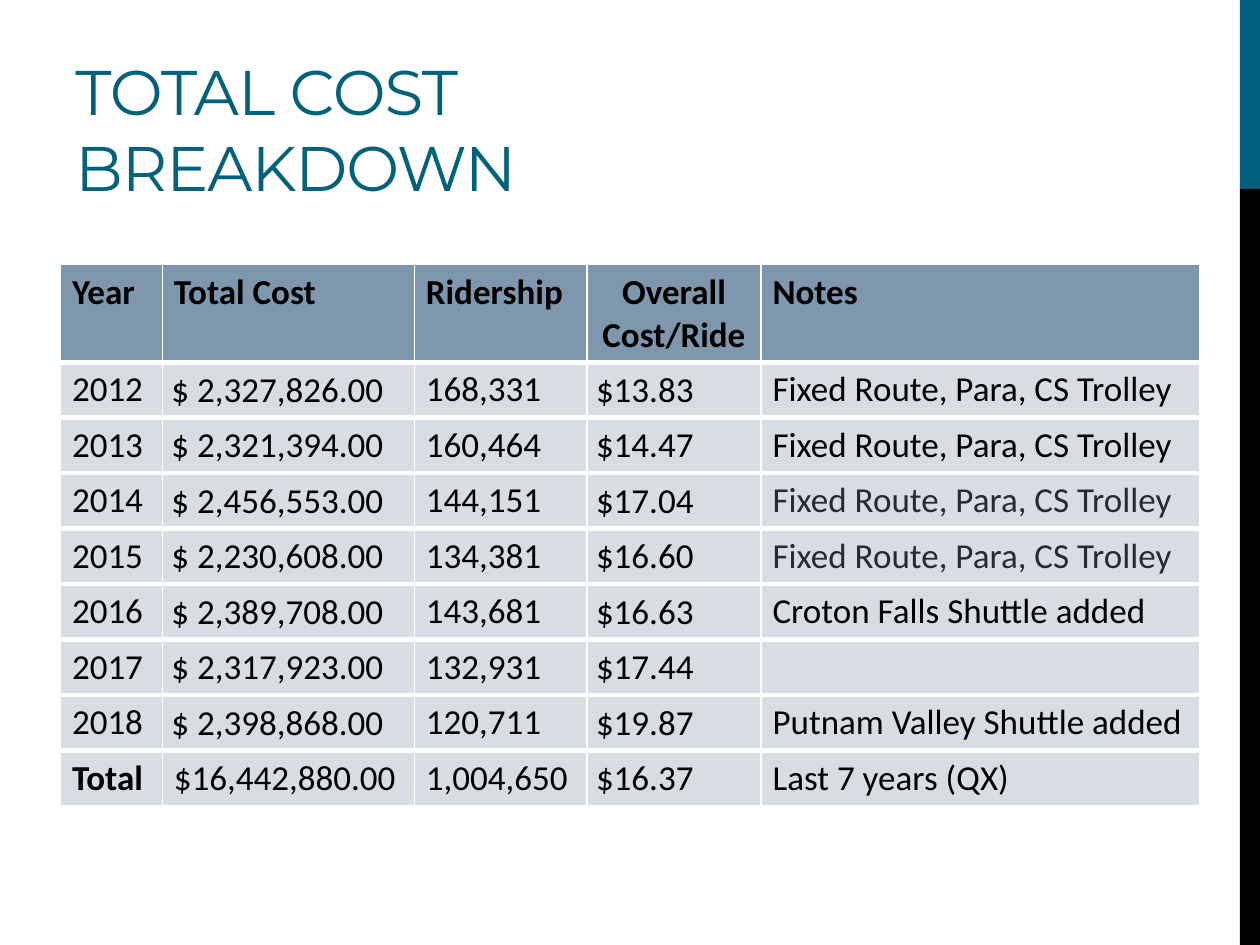
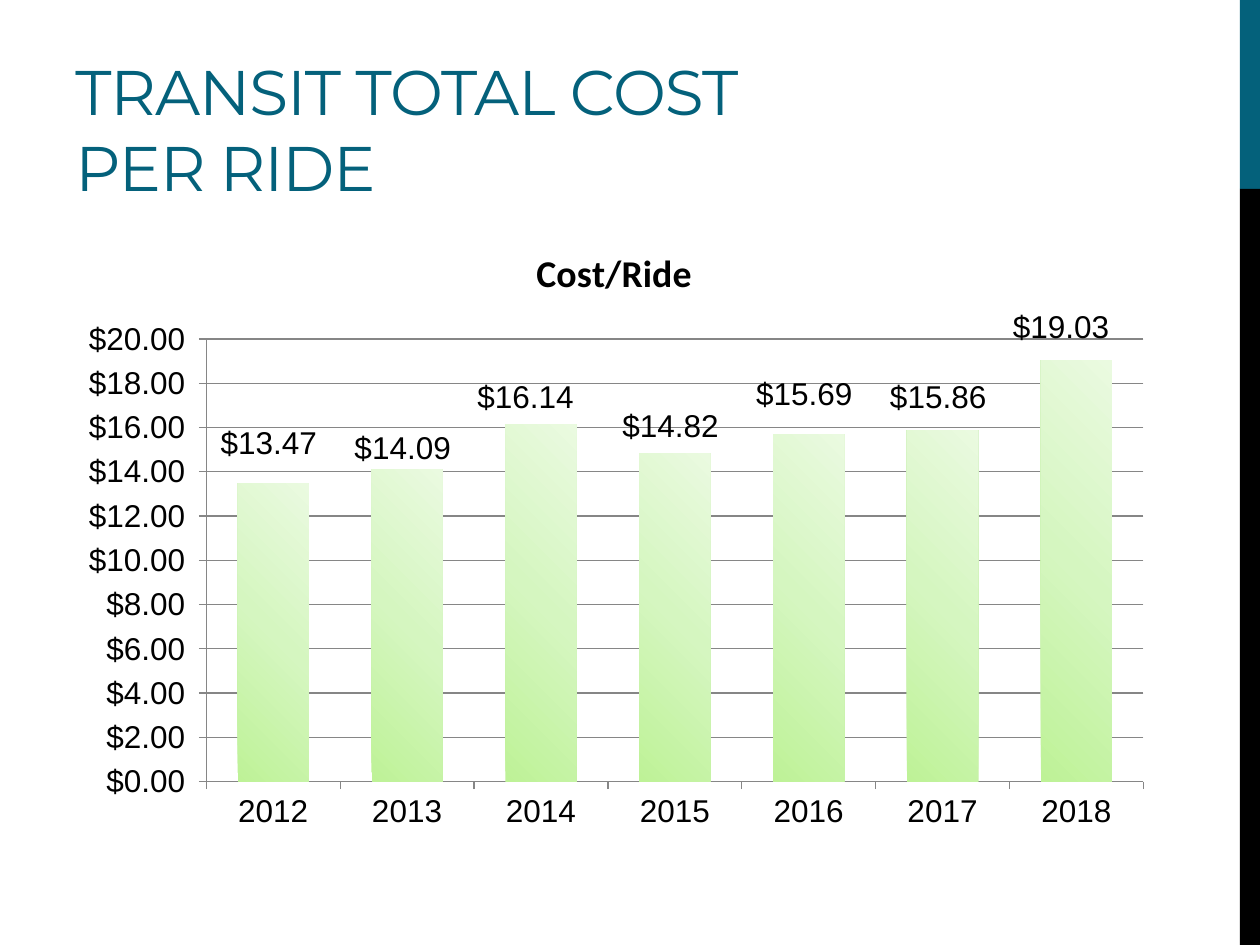
"""Build two transit cost slides: a yearly cost table and a cost per ride chart."""
import copy

import pptx
import pptx.chart.data
import pptx.dml.color
import pptx.enum.chart
import pptx.enum.shapes
import pptx.enum.text
import pptx.oxml
import pptx.oxml.ns
import pptx.util

Pt = pptx.util.Pt
RGBColor = pptx.dml.color.RGBColor
qn = pptx.oxml.ns.qn
MIDDLE = pptx.enum.text.MSO_ANCHOR.MIDDLE

TEAL = RGBColor(0x04, 0x61, 0x7B)
BLACK = RGBColor(0x00, 0x00, 0x00)
INK = RGBColor(0x29, 0x29, 0x34)
HEADER_BLUE = RGBColor(0x7E, 0x97, 0xAD)
ROW_GREY = RGBColor(0xD8, 0xDD, 0xE3)
AXIS_GREY = RGBColor(0x86, 0x86, 0x86)
GREENS = [RGBColor(0xBE, 0xF2, 0x97), RGBColor(0xD5, 0xF6, 0xC0), RGBColor(0xEA, 0xFA, 0xE0)]
DOLLARS = '"$"#,##0.00_);[Red]\\("$"#,##0.00\\)'


def add_run(paragraph, text, font_name, size, color, bold=False):
    run = paragraph.add_run()
    run.text = text
    run.font.name = font_name
    run.font.size = Pt(size)
    run.font.color.rgb = color
    run.font.bold = bold
    return run


def make_layout(prefix="", **places):
    values = "".join(f'<c:{key} val="{value}"/>' for key, value in places.items())
    return pptx.oxml.parse_xml(
        '<c:layout xmlns:c="http://schemas.openxmlformats.org/drawingml/2006/chart">'
        f"<c:manualLayout>{prefix}{values}</c:manualLayout></c:layout>")


presentation = pptx.Presentation()
presentation.slide_width = Pt(720)
presentation.slide_height = Pt(540)

slides = []
for title in ("TOTAL COST BREAKDOWN", "TRANSIT TOTAL COST PER RIDE"):
    slide = presentation.slides.add_slide(presentation.slide_layouts[6])
    for top, height, color in ((0, 108, TEAL), (108, 432, BLACK)):
        band = slide.shapes.add_shape(
            pptx.enum.shapes.MSO_SHAPE.RECTANGLE, Pt(708.5), Pt(top), Pt(11.5), Pt(height))
        band.shadow.inherit = False
        band.fill.solid()
        band.fill.fore_color.rgb = color
        band.line.fill.background()
    title_box = slide.shapes.add_textbox(Pt(36), Pt(12), Pt(456), Pt(108))
    title_box.text_frame.word_wrap = True
    title_box.text_frame.vertical_anchor = pptx.enum.text.MSO_ANCHOR.BOTTOM
    title_run = add_run(title_box.text_frame.paragraphs[0], title, "Montserrat", 36, TEAL)
    title_run.font._element.set("spc", "-60")
    slides.append(slide)
table_slide, chart_slide = slides

SERVICES = "Fixed Route, Para, CS Trolley"
cost_rows = [
    ("Year", "Total Cost", "Ridership", "Overall Cost/Ride", "Notes"),
    ("2012", "$ 2,327,826.00", "168,331", "$13.83", SERVICES),
    ("2013", "$ 2,321,394.00", "160,464", "$14.47", SERVICES),
    ("2014", "$ 2,456,553.00", "144,151", "$17.04", SERVICES),
    ("2015", "$ 2,230,608.00", "134,381", "$16.60", SERVICES),
    ("2016", "$ 2,389,708.00", "143,681", "$16.63", "Croton Falls Shuttle added"),
    ("2017", "$ 2,317,923.00", "132,931", "$17.44", ""),
    ("2018", "$ 2,398,868.00", "120,711", "$19.87", "Putnam Valley Shuttle added"),
    ("Total", "$16,442,880.00", "1,004,650", "$16.37", "Last 7 years (QX)"),
]
last_row = len(cost_rows) - 1
table = table_slide.shapes.add_table(
    len(cost_rows), 5, Pt(34.6), Pt(151.2), Pt(650.9), Pt(309.4)).table
table.horz_banding = False
for column, width in zip(table.columns, (58.2, 144, 98.6, 99.5, 250.6)):
    column.width = Pt(width)
for row_index, values in enumerate(cost_rows):
    is_header = row_index == 0
    table.rows[row_index].height = Pt(55.8 if is_header else 31.7)
    for column_index, text in enumerate(values):
        cell = table.cell(row_index, column_index)
        borders = {"L": 1, "R": 1, "T": 1 if is_header else 3, "B": 1 if row_index == last_row else 3}
        for side, width in borders.items():
            cell._tc.get_or_add_tcPr().append(pptx.oxml.parse_xml(
                f'<a:ln{side} xmlns:a="http://schemas.openxmlformats.org/drawingml/2006/main" '
                f'w="{Pt(width)}"><a:solidFill><a:srgbClr val="FFFFFF"/></a:solidFill></a:ln{side}>'))
        cell.fill.solid()
        cell.fill.fore_color.rgb = HEADER_BLUE if is_header else ROW_GREY
        cell.margin_left = cell.margin_right = Pt(6.6)
        paragraph = cell.text_frame.paragraphs[0]
        if not is_header or column_index == 3:
            cell.vertical_anchor = MIDDLE
        if is_header and column_index == 3:
            paragraph.alignment = pptx.enum.text.PP_ALIGN.CENTER
        is_tight = column_index == 3 or (column_index == 1 and row_index != last_row)
        if is_tight and not is_header:
            cell.margin_left = Pt(5.2)
            cell.margin_right = cell.margin_top = Pt(0.7)
            cell.margin_bottom = Pt(0)
        if text:
            color = INK if column_index == 4 and row_index in (3, 4) else BLACK
            add_run(paragraph, text, "Calibri", 20, color, is_header or text == "Total")

chart_data = pptx.chart.data.CategoryChartData(number_format=DOLLARS)
chart_data.categories = [str(year) for year in range(2012, 2019)]
chart_data.add_series("Cost/Ride", (13.47, 14.09, 16.14, 14.82, 15.69, 15.86, 19.03))
chart = chart_slide.shapes.add_chart(
    pptx.enum.chart.XL_CHART_TYPE.COLUMN_STACKED,
    Pt(36), Pt(126), Pt(630), Pt(356.4), chart_data).chart
chart.font.name = "Arial"
chart.font.size = Pt(18)
chart.font.color.rgb = BLACK
chart.has_legend = False
chart.has_title = True
add_run(chart.chart_title.text_frame.paragraphs[0], "Cost/Ride", "Calibri", 21.6, BLACK, True)
EDGE = '<c:xMode val="edge"/><c:yMode val="edge"/>'
chart.chart_title._element.find(qn("c:tx")).addnext(make_layout(EDGE, x=0.43, y=0.06))

for axis in (chart.category_axis, chart.value_axis):
    axis.major_tick_mark = pptx.enum.chart.XL_TICK_MARK.OUTSIDE
    axis.minor_tick_mark = pptx.enum.chart.XL_TICK_MARK.NONE
    axis.format.line.color.rgb = AXIS_GREY
    axis.format.line.width = Pt(0.75)
value_axis = chart.value_axis
value_axis.minimum_scale = 0
value_axis.maximum_scale = 20
value_axis.major_unit = 2
value_axis.tick_labels.number_format = DOLLARS
value_axis.tick_labels.number_format_is_linked = False
value_axis.has_major_gridlines = True
value_axis.major_gridlines.format.line.color.rgb = AXIS_GREY
value_axis.major_gridlines.format.line.width = Pt(0.75)

plot = chart.plots[0]
plot.gap_width = 88
plot.overlap = 100
plot.vary_by_categories = False
plot_area = plot._element.getparent()
for old_layout in plot_area.findall(qn("c:layout")):
    plot_area.remove(old_layout)
plot_area.insert(0, make_layout(
    '<c:layoutTarget val="inner"/>' + EDGE, x=0.13, y=0.19, w=0.85, h=0.71))

series = plot.series[0]
fill = series.format.fill
fill.gradient()
fill.gradient_angle = 45
first_stop = series._element.find(".//" + qn("a:gs"))
first_stop.addnext(copy.deepcopy(first_stop))
for stop, position, color in zip(fill.gradient_stops, (0, 0.5, 1), GREENS):
    stop.position = position
    stop.color.rgb = color

labels = series.data_labels
labels.show_value = True
labels.number_format = DOLLARS
labels.number_format_is_linked = False
labels.position = pptx.enum.chart.XL_LABEL_POSITION.INSIDE_END
label_shifts = [(0, -0.1), (0, -0.07), (-0.01, -0.08), (0, -0.08),
                (0, -0.1), (0, -0.09), (-0.01, -0.09)]
for index in range(len(label_shifts)):
    series.points[index].data_label.position = pptx.enum.chart.XL_LABEL_POSITION.INSIDE_END
for label, (shift_x, shift_y) in zip(series._element.iter(qn("c:dLbl")), label_shifts):
    label.find(qn("c:idx")).addnext(make_layout(x=shift_x, y=shift_y))
label_group = series._element.find(qn("c:dLbls"))
for leader_lines in label_group.findall(qn("c:showLeaderLines")):
    leader_lines.set("val", "0")
label_group.append(pptx.oxml.parse_xml(
    '<c:extLst xmlns:c="http://schemas.openxmlformats.org/drawingml/2006/chart">'
    '<c:ext uri="{CE6537A1-D6FC-4f65-9D91-7224C49458BB}" '
    'xmlns:c15="http://schemas.microsoft.com/office/drawing/2012/chart">'
    '<c15:showLeaderLines val="0"/></c:ext></c:extLst>'))

presentation.save("out.pptx")
